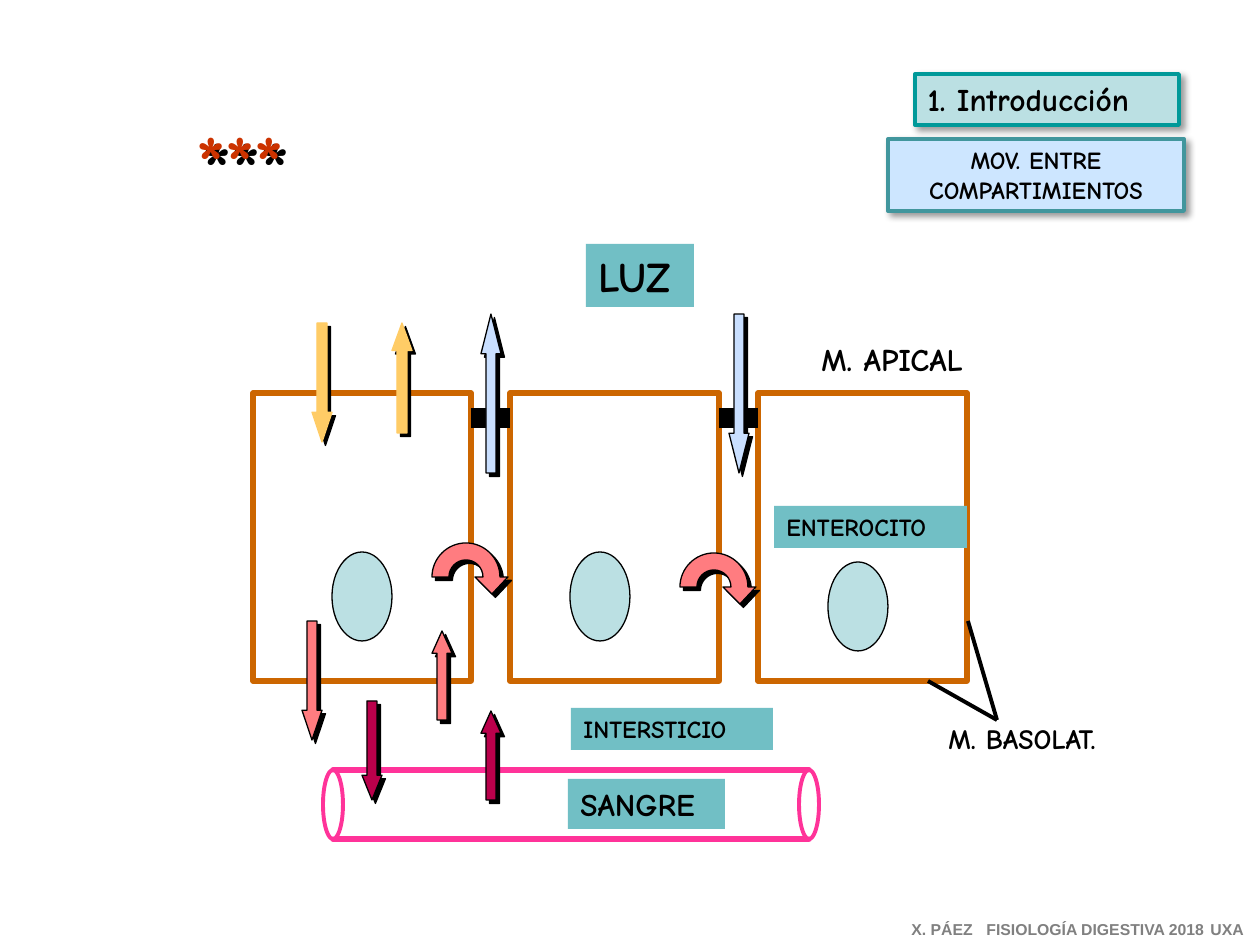
from lxml import etree
from pptx import Presentation
from pptx.dml.color import RGBColor
from pptx.enum.shapes import MSO_CONNECTOR, MSO_SHAPE
from pptx.enum.text import MSO_ANCHOR, MSO_AUTO_SIZE, PP_ALIGN
from pptx.oxml.ns import qn
from pptx.util import Pt

PX = 914400 / 126
RECTANGLE, OVAL = MSO_SHAPE.RECTANGLE, MSO_SHAPE.OVAL
UP, DOWN = MSO_SHAPE.UP_ARROW, MSO_SHAPE.DOWN_ARROW
STRAIGHT = MSO_CONNECTOR.STRAIGHT
LEFT, CENTER = PP_ALIGN.LEFT, PP_ALIGN.CENTER
TOP, NO_AUTOFIT = MSO_ANCHOR.TOP, MSO_AUTO_SIZE.NONE

BLACK = RGBColor(0x00, 0x00, 0x00)
WHITE = RGBColor(0xFF, 0xFF, 0xFF)
GRAY = RGBColor(0x80, 0x80, 0x80)
BROWN = RGBColor(0xCC, 0x66, 0x00)
PINK = RGBColor(0xFF, 0x33, 0x99)
YELLOW = RGBColor(0xFF, 0xCC, 0x66)
SKY = RGBColor(0xC9, 0xDF, 0xFF)
SALMON = RGBColor(0xFF, 0x7C, 0x80)
CRIMSON = RGBColor(0xBA, 0x00, 0x4B)
TEAL = RGBColor(0x71, 0xBF, 0xC5)
PALE_TEAL = RGBColor(0xBB, 0xE0, 0xE3)
PALE_BLUE = RGBColor(0xCD, 0xE6, 0xFF)
TITLE_EDGE = RGBColor(0x00, 0x99, 0x99)
SUBTITLE_EDGE = RGBColor(0x41, 0x96, 0x9D)
RED = RGBColor(0xCC, 0x33, 0x00)

# Shadows: distance and blur in points, opacity in percent
HARD_SHADOW = (2.8, 0, 100)
SOFT_SHADOW = (3, 4, 40)
TEXT_SHADOW = (5, 0, 100)


def style(shape, fill=None, line=None, width=0.75, shadow=None):
    if fill is None:
        shape.fill.background()
    else:
        shape.fill.solid()
        shape.fill.fore_color.rgb = fill
    if line is None:
        shape.line.fill.background()
    else:
        shape.line.color.rgb = line
        shape.line.width = Pt(width)
    shape.shadow.inherit = False
    if shadow:
        distance, blur, opacity = shadow
        effects = shape._element.spPr.find(qn("a:effectLst"))
        outer = etree.SubElement(effects, qn("a:outerShdw"), blurRad=str(Pt(blur)),
                                 dist=str(Pt(distance)), dir="2700000", algn="ctr", rotWithShape="0")
        color = etree.SubElement(outer, qn("a:srgbClr"), val="000000")
        etree.SubElement(color, qn("a:alpha"), val=str(opacity * 1000))


def write(shape, text, size=14, color=BLACK, font="Comic Neue", align=LEFT):
    frame = shape.text_frame
    frame.word_wrap = True
    frame.auto_size = NO_AUTOFIT
    frame.vertical_anchor = TOP
    paragraph = frame.paragraphs[0]
    paragraph.alignment = align
    run = paragraph.add_run()
    run.text = text
    run.font.size = Pt(size)
    run.font.bold = True
    run.font.color.rgb = color
    run.font.name = font
    return paragraph


presentation = Presentation()
presentation.slide_width = round(1260 * PX)
presentation.slide_height = round(945 * PX)
slide = presentation.slides.add_slide(presentation.slide_layouts[5])
shapes = slide.shapes

# Title
title = shapes.title
title.left, title.top, title.width, title.height = [round(n * PX) for n in (915, 74, 264, 51)]
style(title, PALE_TEAL, TITLE_EDGE, 2.25, SOFT_SHADOW)
write(title, "1. Introducción", size=18)

# Cells, blood vessel with its two ends, nuclei
for kind, box, fill, line, width in (
    (RECTANGLE, (253, 393, 218, 288), None, BROWN, 3),
    (RECTANGLE, (510, 393, 209, 288), None, BROWN, 3),
    (RECTANGLE, (758, 393, 209, 288), None, BROWN, 3),
    (RECTANGLE, (333, 770, 476, 69), None, PINK, 3),
    (OVAL, (323, 770, 20, 69), WHITE, PINK, 2.25),
    (OVAL, (799, 770, 20, 69), WHITE, PINK, 2.25),
    (OVAL, (332, 552, 60, 89), PALE_TEAL, BLACK, 0.75),
    (OVAL, (570, 552, 60, 89), PALE_TEAL, BLACK, 0.75),
    (OVAL, (828, 562, 60, 89), PALE_TEAL, BLACK, 0.75),
):
    shape = shapes.add_shape(kind, *[round(n * PX) for n in box])
    style(shape, fill, line, width)

# Tight junctions and pointers to the basolateral membrane
junctions = [(x, y, x + 39, y, 6) for x in (471, 719) for y in (413, 423)]
pointers = [(997, 720, 968, 621, 2.25), (997, 720, 928, 681, 2.25)]
for *ends, width in junctions + pointers:
    connector = shapes.add_connector(STRAIGHT, *[round(n * PX) for n in ends])
    connector.line.color.rgb = BLACK
    connector.line.width = Pt(width)
    etree.SubElement(connector._element.spPr, qn("a:effectLst"))

# Straight transport arrows, each head a quarter of the length
ARROW_WIDTH = 20
for kind, left, top, length, fill, line in (
    (UP, 392, 323, 110, YELLOW, YELLOW),
    (UP, 481, 314, 159, SKY, BLACK),
    (UP, 432, 631, 89, SALMON, BLACK),
    (UP, 481, 711, 89, CRIMSON, BLACK),
    (DOWN, 312, 323, 119, YELLOW, YELLOW),
    (DOWN, 302, 621, 119, SALMON, BLACK),
    (DOWN, 729, 314, 159, SKY, BLACK),
    (DOWN, 362, 701, 99, CRIMSON, BLACK),
):
    arrow = shapes.add_shape(kind, *[round(n * PX) for n in (left, top, ARROW_WIDTH, length)])
    arrow.adjustments[0] = 0.5
    arrow.adjustments[1] = length / 4 / ARROW_WIDTH
    style(arrow, fill, line, shadow=HARD_SHADOW)

# Curved arrows: each half ring is two Bezier quarters, then comes the head
INNER, OUTER = 17, 34
BEZIER = 0.55
HALF_RING = [(1, 0), (1, -BEZIER), (BEZIER, -1), (0, -1), (-BEZIER, -1), (-1, -BEZIER), (-1, 0)]
outline = [(INNER * x, INNER * y) for x, y in HALF_RING]
outline += [(OUTER * x, OUTER * y) for x, y in reversed(HALF_RING)]
outline += [(42, 0), (26, 17), (9, 0)]
for center_x, center_y in ((466, 577), (714, 587)):
    points = [(round((center_x + x) * PX), round((center_y + y) * PX)) for x, y in outline]
    builder = shapes.build_freeform(*points[0], scale=1.0)
    builder.add_line_segments(points[1:], close=True)
    curved_arrow = builder.convert_to_shape()
    segments = list(curved_arrow._element.iter(qn("a:lnTo")))
    for first in (0, 3, 7, 10):
        curve = etree.Element(qn("a:cubicBezTo"))
        segments[first].addprevious(curve)
        for segment in segments[first:first + 3]:
            curve.append(segment[0])
            segment.getparent().remove(segment)
    style(curved_arrow, SALMON, BLACK, shadow=HARD_SHADOW)

# Labels
for text, box, fill, size in (
    ("ENTEROCITO", (774, 506, 193, 42), TEAL, 14),
    ("LUZ", (586, 244, 108, 63), TEAL, 24),
    ("SANGRE", (568, 779, 157, 50), TEAL, 18),
    ("INTERSTICIO", (571, 708, 202, 42), TEAL, 14),
    ("M. APICAL", (809, 334, 197, 50), None, 18),
    ("M. BASOLAT.", (936, 715, 223, 47), None, 16),
):
    label = shapes.add_textbox(*[round(n * PX) for n in box])
    style(label, fill)
    write(label, text, size=size)

# Asterisks, whose shadow falls from the letters
stars = shapes.add_textbox(*[round(n * PX) for n in (184, 107, 149, 106)])
style(stars, shadow=TEXT_SHADOW)
write(stars, "***", size=44, color=RED)

# Subtitle
subtitle = shapes.add_textbox(*[round(n * PX) for n in (888, 139, 296, 72)])
style(subtitle, PALE_BLUE, SUBTITLE_EDGE, 2.25, SOFT_SHADOW)
write(subtitle, "MOV. ENTRE COMPARTIMIENTOS", align=CENTER)

# Footer, its three parts set at tab stops
footer = shapes.add_textbox(*[round(n * PX) for n in (899, 914, 361, 31)])
paragraph = write(footer, "X. PÁEZ\tFISIOLOGÍA DIGESTIVA 2018\tUXA", size=9, color=GRAY, font="Arial")
tabs = etree.SubElement(paragraph._p.get_or_add_pPr(), qn("a:tabLst"))
for stop in (75, 299):
    etree.SubElement(tabs, qn("a:tab"), pos=str(round(stop * PX)), algn="l")

presentation.save("out.pptx")
